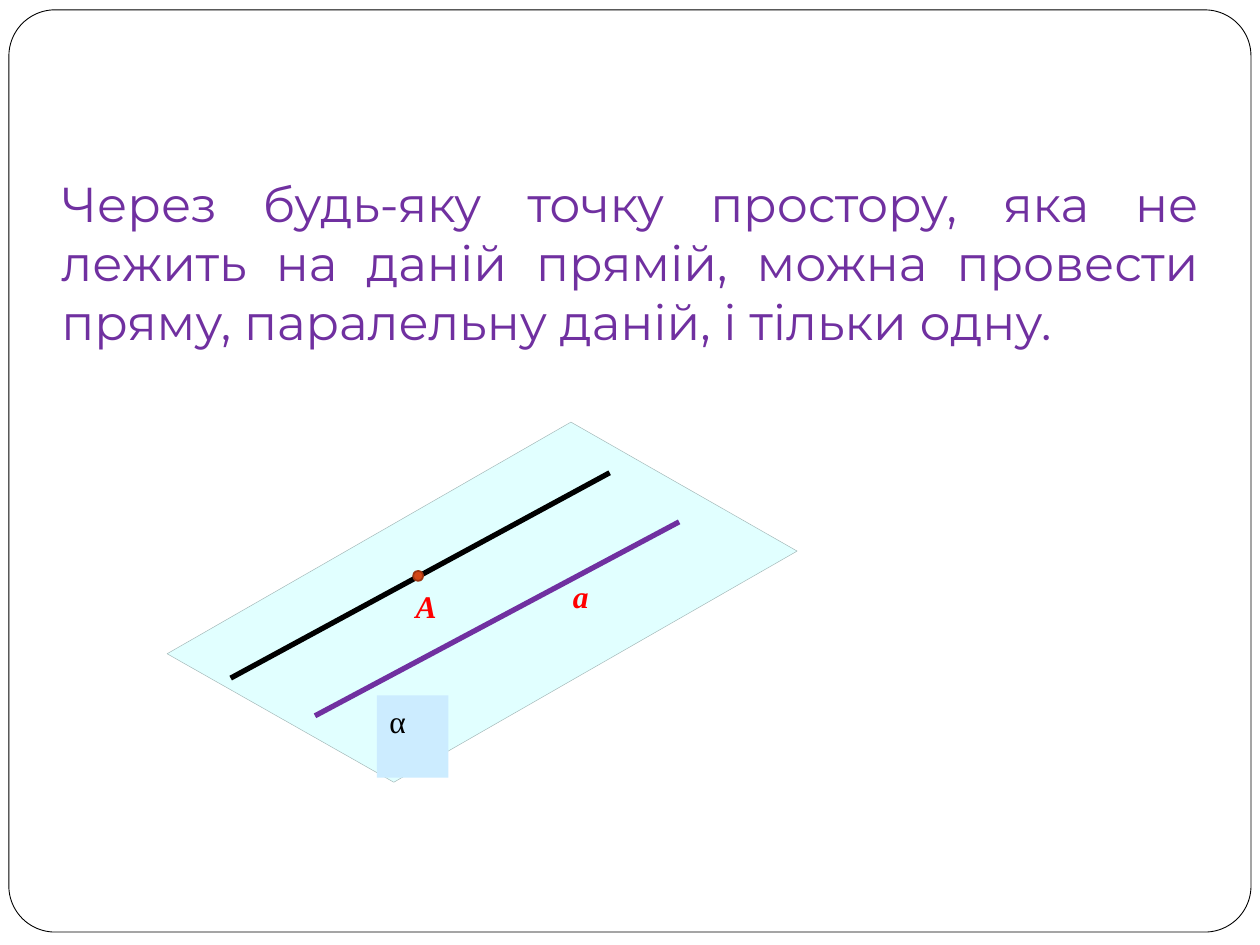
from dataclasses import dataclass

from lxml.etree import SubElement
from pptx import Presentation
from pptx.dml.color import RGBColor
from pptx.enum.shapes import MSO_CONNECTOR as Connector, MSO_SHAPE as Preset
from pptx.enum.text import PP_ALIGN as Align
from pptx.oxml.ns import qn
from pptx.util import Cm, Pt

COLORS = {
    "paper": "FFFFFF",
    "ink": "000000",
    "violet": "7030A0",
    "red": "FF0000",
    "plane": "E1FFFF",
    "plane_edge": "A0B4B4",
    "alpha": "CCECFF",
    "point": "D34817",
    "point_edge": "9C3511",
}


@dataclass
class Label:
    text: str
    box: tuple[float, float, float, float]
    color: str
    font: str = "Times New Roman"
    size: int = 18
    emphasis: bool = False
    align: Align = Align.LEFT
    fill: str | None = None


@dataclass
class Line:
    start: tuple[float, float]
    end: tuple[float, float]
    color: str


THEOREM = Label(
    "Через будь-яку точку простору, яка не лежить на даній прямій, "
    "можна провести пряму, паралельну даній, і тільки одну.",
    (0.99, 3.38, 23.42, 5.06), "violet", "Montserrat", 28, align=Align.JUSTIFY)
ALPHA = Label("α", (7.6, 14.02, 1.44, 1.66), "ink", fill="alpha")
NAMES = [
    Label("a", (11.3, 11.51, 1.35, 1.02), "red", emphasis=True),
    Label("А", (8.13, 11.71, 1.35, 1.02), "red", emphasis=True),
]
GIVEN_LINE = Line((6.35, 14.43), (13.69, 10.52), "violet")
PARALLEL_LINE = Line((4.65, 13.67), (12.29, 9.53), "ink")
PLANE_CORNERS = [(3.37, 13.18), (11.51, 8.51), (16.07, 11.11), (7.94, 15.77)]


def rgb(name: str) -> RGBColor:
    """Return the named colour."""
    return RGBColor.from_string(COLORS[name])


def paint(shape, fill: str, edge: str, width: float) -> None:
    """Give a shape a plain fill and outline."""
    shape.shadow.inherit = False
    shape.fill.solid()
    shape.fill.fore_color.rgb = rgb(fill)
    shape.line.color.rgb = rgb(edge)
    shape.line.width = Pt(width)


def draw_label(slide, label: Label) -> None:
    """Draw a text box in one font."""
    box = slide.shapes.add_textbox(*map(Cm, label.box))
    if label.fill:
        box.fill.solid()
        box.fill.fore_color.rgb = rgb(label.fill)
    box.text_frame.word_wrap = True
    paragraph = box.text_frame.paragraphs[0]
    paragraph.text = label.text
    paragraph.alignment = label.align
    font = paragraph.font
    font.name = label.font
    font.size = Pt(label.size)
    font.bold = font.italic = label.emphasis
    font.color.rgb = rgb(label.color)


def draw_line(slide, line: Line) -> None:
    """Draw a straight line of the figure."""
    connector = slide.shapes.add_connector(
        Connector.STRAIGHT, *map(Cm, line.start + line.end))
    connector.line.color.rgb = rgb(line.color)
    connector.line.width = Pt(3)
    SubElement(connector._element.spPr, qn("a:effectLst"))


def draw_plane(slide) -> None:
    """Draw the plane as a tilted parallelogram."""
    first, *others = [(Cm(x), Cm(y)) for x, y in PLANE_CORNERS]
    builder = slide.shapes.build_freeform(*first)
    builder.add_line_segments(others, close=True)
    paint(builder.convert_to_shape(), "plane", "plane_edge", 0.25)


def main() -> None:
    """Build the slide and save it."""
    deck = Presentation()
    deck.slide_width, deck.slide_height = Cm(25.4), Cm(19.05)
    slide = deck.slides.add_slide(deck.slide_layouts[6])

    frame = slide.shapes.add_shape(
        Preset.ROUNDED_RECTANGLE, Cm(0.18), Cm(0.2), Cm(25.04), Cm(18.59))
    frame.adjustments[0] = 0.05
    paint(frame, "paper", "ink", 0.5)

    draw_label(slide, THEOREM)
    draw_plane(slide)
    draw_label(slide, ALPHA)
    draw_line(slide, GIVEN_LINE)
    for name in NAMES:
        draw_label(slide, name)
    draw_line(slide, PARALLEL_LINE)

    point = slide.shapes.add_shape(
        Preset.OVAL, Cm(8.33), Cm(11.51), Cm(0.2), Cm(0.2))
    paint(point, "point", "point_edge", 1)

    deck.save("out.pptx")


if __name__ == "__main__":
    main()
